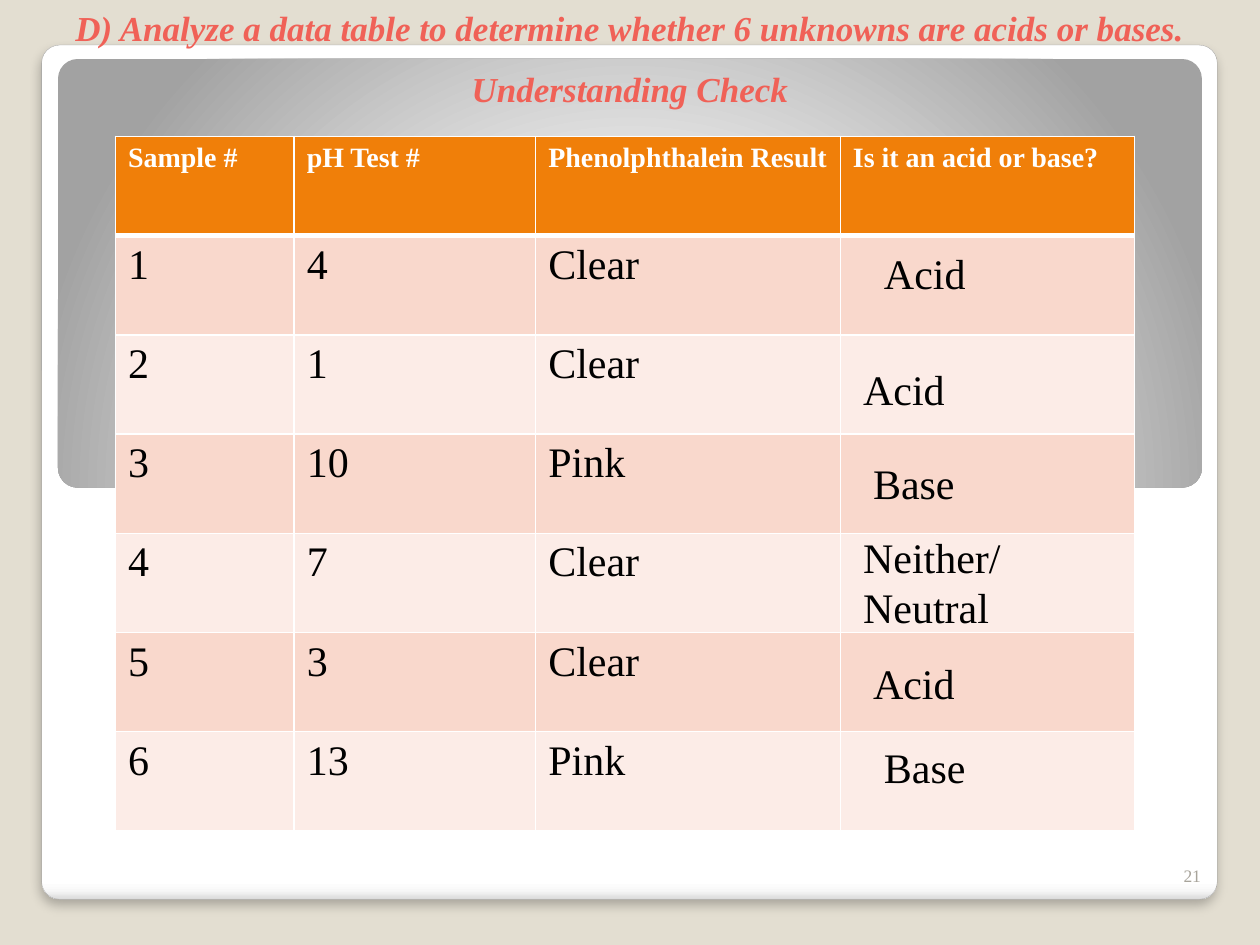
"""Build the acid-or-base understanding check slide with its answer table."""
from lxml import etree
from pptx import Presentation
from pptx.dml.color import RGBColor
from pptx.enum.shapes import MSO_SHAPE
from pptx.enum.text import MSO_ANCHOR, MSO_AUTO_SIZE, PP_ALIGN
from pptx.oxml import parse_xml
from pptx.oxml.ns import nsdecls, qn
from pptx.util import Cm, Pt

ROUNDED = MSO_SHAPE.ROUNDED_RECTANGLE
TOP, BOTTOM = MSO_ANCHOR.TOP, MSO_ANCHOR.BOTTOM
LEFT, CENTER, RIGHT = PP_ALIGN.LEFT, PP_ALIGN.CENTER, PP_ALIGN.RIGHT
FIXED = MSO_AUTO_SIZE.NONE
FONT = "Times New Roman"

HEADING = [
    "D) Analyze a data table to determine whether 6 unknowns are acids or bases.",
    "Understanding Check",
]
HEADERS = ["Sample #", "pH Test #", "Phenolphthalein Result", "Is it an acid or base?"]
SAMPLES = [
    ("1", "4", "Clear"),
    ("2", "1", "Clear"),
    ("3", "10", "Pink"),
    ("4", "7", "Clear"),
    ("5", "3", "Clear"),
    ("6", "13", "Pink"),
]
ANSWERS = [
    ("Acid", 17.57, 4.87, 1.27),
    ("Acid", 17.15, 7.2, 1.27),
    ("Neither/ Neutral", 17.15, 10.58, 2.31),
    ("Base", 17.35, 9.1, 1.27),
    ("Acid", 17.35, 13.12, 1.27),
    ("Base", 17.57, 14.82, 1.27),
]
PAGE_NUMBER = "21"

COLUMN_WIDTHS = [3.6, 4.87, 6.14, 5.93]
ROW_HEIGHT = 2
HEADER_FILL = "F07F09"
BAND_FILLS = ["F9D8CC", "FCECE7"]
CARD_STOPS = [(0, "FFFFFF"), (98, "FFFFFF"), (99, "F7F7F7"), (100, "DADADA")]
PANEL_STOPS = [(0, "FFFFFF"), (55, "E1E1E1"), (100, "A2A2A2")]
CARD_SHADE = '<a:lin ang="5400000" scaled="0"/>'
PANEL_SHADE = ('<a:path path="circle"><a:fillToRect l="50000" t="175000" '
               'r="50000" b="-75000"/></a:path>')


def color(hex_code):
    return RGBColor.from_string(hex_code)


def write(frame, text, size=24, ink="000000", bold=False, italic=False,
          align=LEFT, before=0, first=True):
    paragraph = frame.paragraphs[0] if first else frame.add_paragraph()
    paragraph.alignment = align
    paragraph.space_before = Pt(before)
    run = paragraph.add_run()
    run.text = text
    font = run.font
    font.name, font.size, font.bold, font.italic = FONT, Pt(size), bold, italic
    font.color.rgb = color(ink)


def add_label(slide, text, left, top, width, height, anchor=TOP, **style):
    frame = slide.shapes.add_textbox(Cm(left), Cm(top), Cm(width), Cm(height)).text_frame
    frame.word_wrap = True
    frame.vertical_anchor = anchor
    write(frame, text, **style)


def add_rounded(slide, left, top, width, height, corner, stops, shade):
    panel = slide.shapes.add_shape(ROUNDED, Cm(left), Cm(top), Cm(width), Cm(height))
    panel.adjustments[0] = corner
    panel.shadow.inherit = False
    panel.line.fill.background()
    marks = "".join(f'<a:gs pos="{pos * 1000}"><a:srgbClr val="{hex_code}"/></a:gs>'
                    for pos, hex_code in stops)
    gradient = parse_xml(f'<a:gradFill {nsdecls("a")} rotWithShape="1">'
                         f'<a:gsLst>{marks}</a:gsLst>{shade}</a:gradFill>')
    panel.element.spPr.find(qn("a:prstGeom")).addnext(gradient)
    return panel


def add_card(slide):
    card = add_rounded(slide, 0.84, 0.91, 23.7, 17.22, 0.021, CARD_STOPS, CARD_SHADE)
    card.line.color.rgb = color("A4A4A4")
    card.line.width = Pt(0.16)
    effects = card.element.spPr.find(qn("a:effectLst"))
    effects.append(parse_xml(
        f'<a:outerShdw {nsdecls("a")} blurRad="{Pt(6)}" dist="{Pt(4)}" dir="5400000">'
        '<a:srgbClr val="000000"><a:alpha val="25000"/></a:srgbClr></a:outerShdw>'))


def set_borders(cell, bottom):
    properties = cell._tc.get_or_add_tcPr()
    widths = {"lnL": 1, "lnR": 1, "lnT": 1, "lnB": bottom}
    for index, (side, width) in enumerate(widths.items()):
        border = etree.Element(qn(f"a:{side}"), w=str(Pt(width)))
        solid = etree.SubElement(border, qn("a:solidFill"))
        etree.SubElement(solid, qn("a:srgbClr"), val="FFFFFF")
        properties.insert(index, border)


def add_results(slide):
    rows = [HEADERS] + [(*sample, "") for sample in SAMPLES]
    table = slide.shapes.add_table(
        len(rows), len(HEADERS), Cm(2.33), Cm(2.75),
        Cm(sum(COLUMN_WIDTHS)), Cm(ROW_HEIGHT * len(rows))).table
    for column, width in zip(table.columns, COLUMN_WIDTHS):
        column.width = Cm(width)
    for r, values in enumerate(rows):
        header = r == 0
        table.rows[r].height = Cm(ROW_HEIGHT)
        for c, value in enumerate(values):
            cell = table.cell(r, c)
            cell.fill.solid()
            cell.fill.fore_color.rgb = color(HEADER_FILL if header else BAND_FILLS[(r - 1) % 2])
            set_borders(cell, bottom=3 if header else 1)
            if header:
                write(cell.text_frame, value, size=16, ink="FFFFFF", bold=True)
            elif value:
                write(cell.text_frame, value)


def place_heading(slide):
    title = slide.shapes.title
    title.left, title.top, title.width, title.height = Cm(0), Cm(0), Cm(25.4), Cm(2.39)
    frame = title.text_frame
    frame.auto_size = FIXED
    frame.word_wrap = True
    frame.vertical_anchor = TOP
    for index, line in enumerate(HEADING):
        write(frame, line, size=20, ink="F06157", bold=True, italic=True,
              align=CENTER, before=11, first=index == 0)
    slide.shapes.element.append(title.element)


def main():
    deck = Presentation()
    deck.slide_width, deck.slide_height = Cm(25.4), Cm(19.05)
    slide = deck.slides.add_slide(deck.slide_layouts[5])
    slide.background.fill.solid()
    slide.background.fill.fore_color.rgb = color("E3DED1")
    add_card(slide)
    add_rounded(slide, 1.17, 1.19, 23.06, 8.64, 0.046, PANEL_STOPS, PANEL_SHADE)
    add_label(slide, PAGE_NUMBER, 23.19, 16.97, 1.27, 1.02, anchor=BOTTOM,
              size=10, ink="A8A49B", align=RIGHT)
    place_heading(slide)
    add_results(slide)
    for answer, left, top, height in ANSWERS:
        add_label(slide, answer, left, top, 3.6, height)
    deck.save("out.pptx")


if __name__ == "__main__":
    main()
